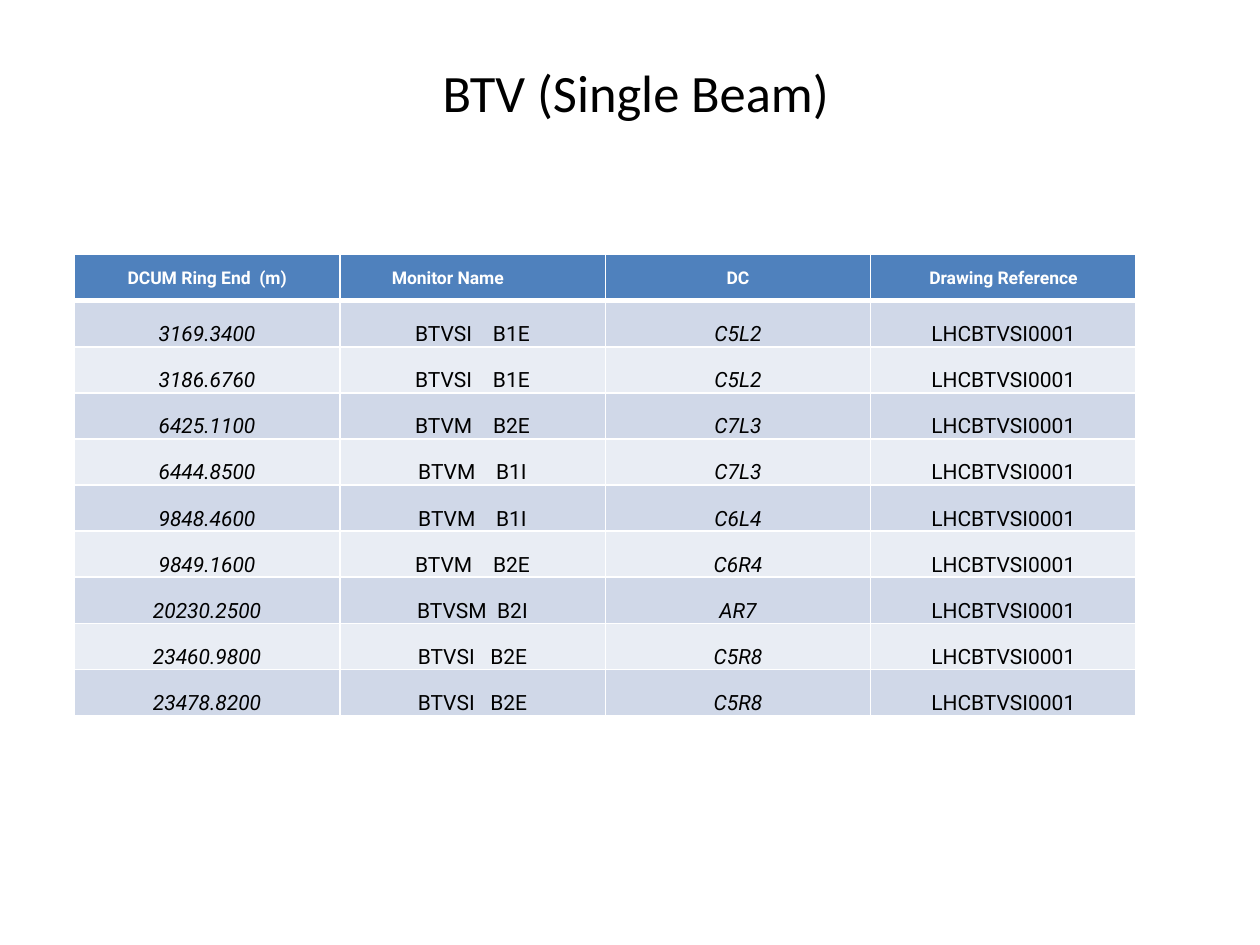
from lxml.etree import SubElement
from pptx import Presentation
from pptx.dml.color import RGBColor
from pptx.enum.text import MSO_ANCHOR, PP_ALIGN
from pptx.oxml.ns import qn
from pptx.util import Pt

HEADS = ["DCUM Ring End  (m)", "Monitor Name", "DC", "Drawing Reference"]
DRAWING = "LHCBTVSI0001"
ROWS = [
    ("3169.3400", "BTVSI    B1E", "C5L2"),
    ("3186.6760", "BTVSI    B1E", "C5L2"),
    ("6425.1100", "BTVM    B2E", "C7L3"),
    ("6444.8500", "BTVM    B1I", "C7L3"),
    ("9848.4600", "BTVM    B1I", "C6L4"),
    ("9849.1600", "BTVM    B2E", "C6R4"),
    ("20230.2500", "BTVSM  B2I", "AR7"),
    ("23460.9800", "BTVSI   B2E", "C5R8"),
    ("23478.8200", "BTVSI   B2E", "C5R8"),
]
BANDS = ["D0D8E8", "E9EDF4"]


def color(code):
    """Turn a hex string into a colour."""
    return RGBColor.from_string(code)


def style(para, name, size, code, bold=False, italic=False):
    """Centre a paragraph and set its font."""
    para.alignment = PP_ALIGN.CENTER
    font = para.font
    font.name, font.size = name, Pt(size)
    font.bold, font.italic = bold, italic
    font.color.rgb = color(code)


def border(cell, top, bottom):
    """Draw white lines around a cell, with widths in points."""
    props = cell._tc.get_or_add_tcPr()
    for tag, width in [("lnL", 1), ("lnR", 1), ("lnT", top), ("lnB", bottom)]:
        line = SubElement(props, qn(f"a:{tag}"), w=str(Pt(width)))
        fill = SubElement(line, qn("a:solidFill"))
        SubElement(fill, qn("a:srgbClr"), val="FFFFFF")


def set_cell(cell, text, row, col):
    """Write and format one cell by its place in the grid."""
    head = row == 0
    border(cell, 3 if row == 1 else 1, 3 if head else 1)
    cell.fill.solid()
    cell.fill.fore_color.rgb = color("4F81BD" if head else BANDS[(row - 1) % 2])
    cell.margin_left = cell.margin_top = Pt(0.7)
    cell.margin_right = Pt(29 if head and col == 1 else 0.7)
    cell.margin_bottom = Pt(0)
    cell.vertical_anchor = MSO_ANCHOR.MIDDLE if head else MSO_ANCHOR.BOTTOM
    cell.text = text
    para = cell.text_frame.paragraphs[0]
    if head:
        style(para, "Roboto", 10, "FFFFFF", bold=True)
    else:
        style(para, "Roboto", 12, "000000", italic=col in (0, 2))


def add_title(slide, left, top, width, height):
    """Place the slide title in the given box."""
    title = slide.shapes.title
    title.left, title.top = Pt(left), Pt(top)
    title.width, title.height = Pt(width), Pt(height)
    title.text = "BTV (Single Beam)"
    title.text_frame.vertical_anchor = MSO_ANCHOR.MIDDLE
    style(title.text_frame.paragraphs[0], "Calibri", 30, "000000")


def add_grid(slide, left, top, width, height):
    """Place the monitor table in the given box."""
    data = [HEADS] + [[*row, DRAWING] for row in ROWS]
    box = Pt(left), Pt(top), Pt(width), Pt(height)
    table = slide.shapes.add_table(len(data), len(HEADS), *box).table
    for row, texts in enumerate(data):
        for col, text in enumerate(texts):
            set_cell(table.cell(row, col), text, row, col)


def main():
    """Build and save the slide."""
    deck = Presentation()
    deck.slide_width, deck.slide_height = Pt(720), Pt(540)
    slide = deck.slides.add_slide(deck.slide_layouts[5])
    add_title(slide, 111, 21.6, 504.7, 61.2)
    add_grid(slide, 42.5, 145.5, 606.8, 263.5)
    deck.save("out.pptx")


if __name__ == "__main__":
    main()
